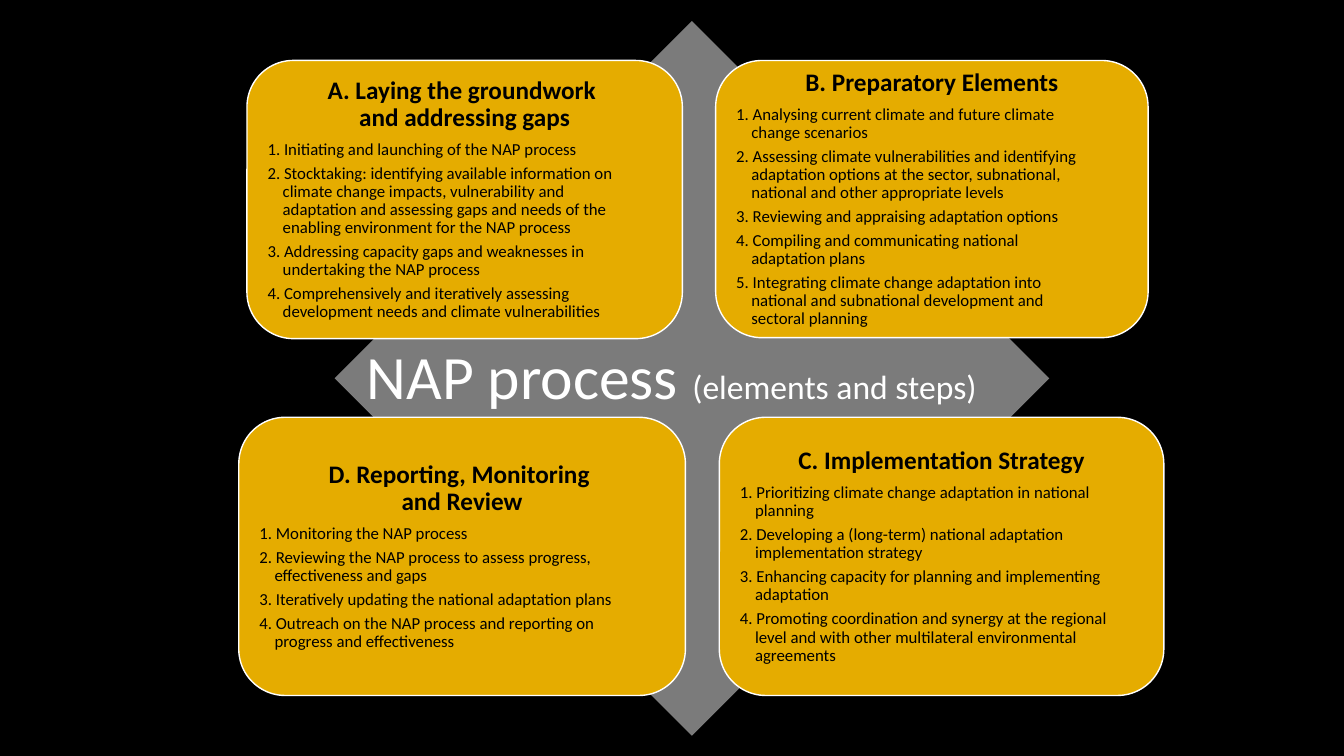
from pptx import Presentation
from pptx.dml.color import RGBColor
from pptx.enum.shapes import MSO_SHAPE
from pptx.enum.text import MSO_ANCHOR, MSO_AUTO_SIZE, PP_ALIGN
from pptx.util import Pt

TITLE = [("NAP process ", 44), ("(elements and steps)", 24)]

# left, top, width, height in points; heading; steps
CARDS = [
    ((170.6, 298.1, 319, 198.7), "D. Reporting, Monitoring \nand Review", [
        "Monitoring the NAP process",
        "Reviewing the NAP process to assess progress,\neffectiveness and gaps",
        "Iteratively updating the national adaptation plans",
        "Outreach on the NAP process and reporting on\nprogress and effectiveness",
    ]),
    ((176.4, 43.2, 311, 198.7), "A. Laying the groundwork \nand addressing gaps", [
        "Initiating and launching of the NAP process",
        "Stocktaking: identifying available information on\n"
        "climate change impacts, vulnerability and\n"
        "adaptation and assessing gaps and needs of the\n"
        "enabling environment for the NAP process",
        "Addressing capacity gaps and weaknesses in\nundertaking the NAP process",
        "Comprehensively and iteratively assessing\n"
        "development needs and climate vulnerabilities",
    ]),
    ((513.8, 298.1, 317.5, 198.7), "C. Implementation Strategy", [
        "Prioritizing climate change adaptation in national\nplanning",
        "Developing a (long-term) national adaptation\nimplementation strategy",
        "Enhancing capacity for planning and implementing\nadaptation",
        "Promoting coordination and synergy at the regional\n"
        "level and with other multilateral environmental\nagreements",
    ]),
    ((511.2, 43.2, 308.9, 198), "B. Preparatory Elements", [
        "Analysing current climate and future climate\nchange scenarios",
        "Assessing climate vulnerabilities and identifying\n"
        "adaptation options at the sector, subnational,\n"
        "national and other appropriate levels",
        "Reviewing and appraising adaptation options",
        "Compiling and communicating national\nadaptation plans",
        "Integrating climate change adaptation into\n"
        "national and subnational development and\nsectoral planning",
    ]),
]
HANGING_INDENT = Pt(10.85)


def color(hex_code):
    return RGBColor.from_string(hex_code)


def style(font, size, hex_code, bold=False):
    font.name = "Calibri"
    font.size = Pt(size)
    font.bold = bold
    font.color.rgb = color(hex_code)


def add_filled(page, kind, bounds, fill):
    shape = page.shapes.add_shape(kind, *map(Pt, bounds))
    shape.shadow.inherit = False
    shape.fill.solid()
    shape.fill.fore_color.rgb = color(fill)
    return shape


def add_card(page, bounds, heading, steps):
    card = add_filled(page, MSO_SHAPE.ROUNDED_RECTANGLE, bounds, "E5AC00")
    card.adjustments[0] = 0.167
    card.line.color.rgb = color("FFFFFF")
    card.line.width = Pt(1)

    frame = card.text_frame
    frame.word_wrap = True
    frame.vertical_anchor = MSO_ANCHOR.MIDDLE
    frame.margin_left = frame.margin_right = Pt(5)
    frame.margin_top = frame.margin_bottom = Pt(5)

    para = frame.paragraphs[0]
    para.text = heading
    para.alignment = PP_ALIGN.CENTER
    para.line_spacing = 0.9
    for span in para.runs:
        style(span.font, 18, "000000", bold=True)

    for number, step in enumerate(steps, 1):
        para = frame.add_paragraph()
        para.text = f"{number}. {step}"
        para.alignment = PP_ALIGN.LEFT
        para.line_spacing = 0.9
        para.space_before = Pt(6.3 if number == 1 else 4.2)
        properties = para._p.get_or_add_pPr()
        properties.set("marL", str(HANGING_INDENT))
        properties.set("indent", str(-HANGING_INDENT))
        for span in para.runs:
            style(span.font, 12, "000000")


def place_title(page):
    """Fill the title and bring it in front of the diamond."""
    title = page.shapes.title
    title.left, title.top, title.width, title.height = map(Pt, (252.7, 237.6, 454.3, 60.5))
    frame = title.text_frame
    frame.word_wrap = True
    frame.auto_size = MSO_AUTO_SIZE.NONE
    frame.vertical_anchor = MSO_ANCHOR.TOP
    para = frame.paragraphs[0]
    para.alignment = PP_ALIGN.CENTER
    for words, size in TITLE:
        span = para.add_run()
        span.text = words
        style(span.font, size, "FFFFFF")
    title.element.getparent().append(title.element)


def main():
    deck = Presentation()
    deck.slide_width, deck.slide_height = Pt(960), Pt(540)
    page = deck.slides.add_slide(deck.slide_layouts[5])
    page.background.fill.solid()
    page.background.fill.fore_color.rgb = color("000000")

    diamond = add_filled(page, MSO_SHAPE.DIAMOND, (239, 15, 510.5, 510.5), "7B7B7B")
    diamond.line.fill.background()
    for card in CARDS:
        add_card(page, *card)
    place_title(page)
    deck.save("out.pptx")


if __name__ == "__main__":
    main()
